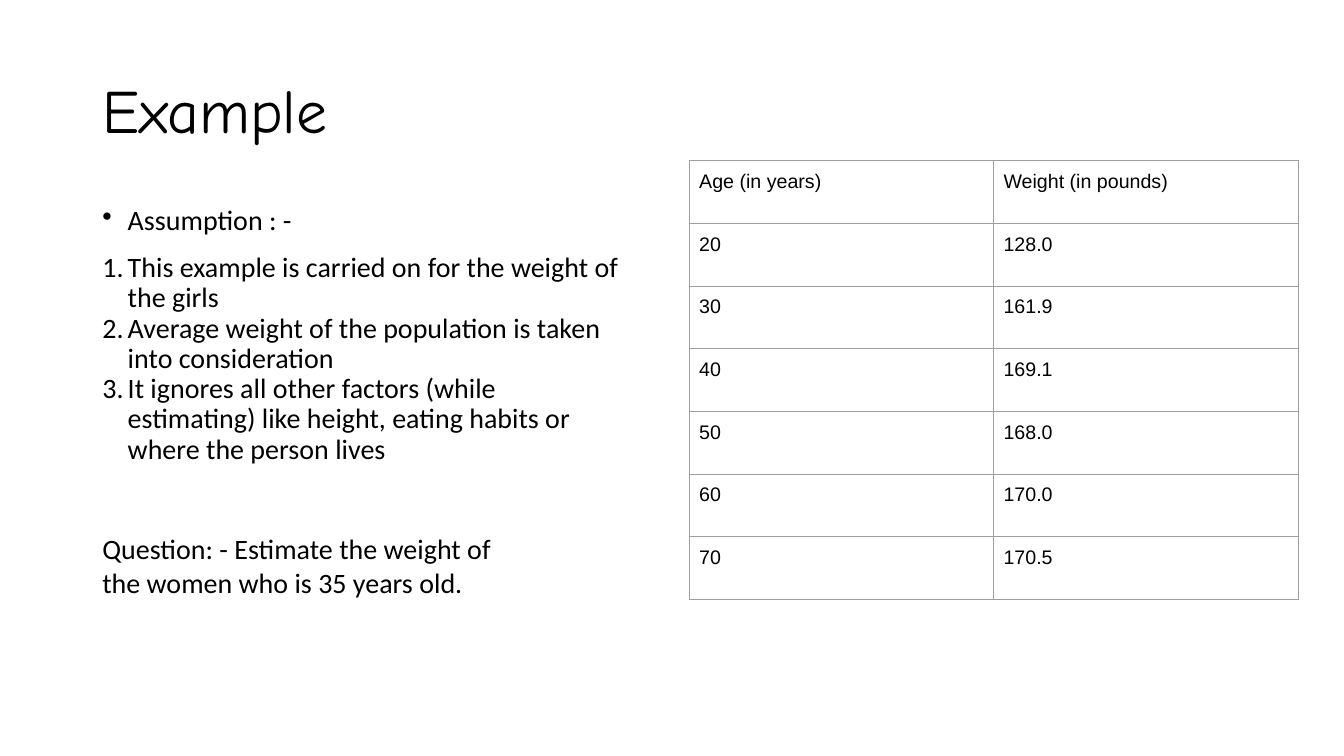
from lxml import etree
from pptx import Presentation
from pptx.dml.color import RGBColor
from pptx.enum.text import MSO_ANCHOR, PP_ALIGN
from pptx.oxml.ns import qn
from pptx.util import Cm, Pt

LEFT = PP_ALIGN.LEFT
MIDDLE = MSO_ANCHOR.MIDDLE
TOP = MSO_ANCHOR.TOP


def style(paragraph, typeface, size, color="000000"):
    paragraph.alignment = LEFT
    paragraph.font.name = typeface
    paragraph.font.size = Pt(size)
    paragraph.font.bold = False
    paragraph.font.color.rgb = RGBColor.from_string(color)


def add_border(cell, side, color):
    line = etree.SubElement(cell._tc.get_or_add_tcPr(), qn(f"a:ln{side}"), w=str(Pt(0.75)))
    fill = etree.SubElement(line, qn("a:solidFill"))
    etree.SubElement(fill, qn("a:srgbClr"), val=color)


prs = Presentation()
prs.slide_width = Cm(33.87)
prs.slide_height = Cm(19.05)
slide = prs.slides.add_slide(prs.slide_layouts[5])

title = slide.shapes.title
title.left, title.top, title.width, title.height = Cm(2.33), Cm(1.01), Cm(29.21), Cm(3.68)
title.text_frame.text = "Example"
title.text_frame.vertical_anchor = MIDDLE
heading = title.text_frame.paragraphs[0]
heading.line_spacing = 0.9
style(heading, "Comic Neue", 44)

assumptions = [
    ("Assumption : -", "buChar", {"char": "•"}, 12),
    ("This example is carried on for the weight of the girls", "buAutoNum", {"type": "arabicPeriod"}, 0),
    ("Average weight of the population is taken into consideration", "buAutoNum", {"type": "arabicPeriod"}, 0),
    ("It ignores all other factors (while estimating) like height, eating habits or where the person lives",
     "buAutoNum", {"type": "arabicPeriod"}, 12),
]
body = slide.shapes.add_textbox(Cm(2.33), Cm(5.08), Cm(13.55), Cm(7.84)).text_frame
body.word_wrap = True
body.text = "\n".join(text for text, *_ in assumptions)
for paragraph, (_, marker, attributes, space_after) in zip(body.paragraphs, assumptions):
    style(paragraph, "Calibri", 20)
    paragraph.line_spacing = 0.9
    paragraph.space_after = Pt(space_after)
    properties = paragraph._p.get_or_add_pPr()
    properties.set("marL", str(Cm(0.64)))
    properties.set("indent", str(Cm(-0.64)))
    bullet = etree.Element(qn(f"a:{marker}"), attributes)
    properties.find(qn("a:defRPr")).addprevious(bullet)

question = slide.shapes.add_textbox(Cm(2.33), Cm(13.28), Cm(10.77), Cm(3.5)).text_frame
question.word_wrap = True
question.text = "Question: - Estimate the weight of the women who is 35 years old."
style(question.paragraphs[0], "Calibri", 20)

weights = [
    ("Age (in years)", "Weight (in pounds)"),
    ("20", "128.0"),
    ("30", "161.9"),
    ("40", "169.1"),
    ("50", "168.0"),
    ("60", "170.0"),
    ("70", "170.5"),
]
table = slide.shapes.add_table(len(weights), 2, Cm(17.37), Cm(4.05), Cm(15.34), Cm(11.06)).table
table.first_row = False
table.horz_banding = False
for row, values in enumerate(weights):
    for column, value in enumerate(values):
        cell = table.cell(row, column)
        cell.text = value
        cell.vertical_anchor = TOP
        cell.margin_left = cell.margin_right = cell.margin_top = cell.margin_bottom = Cm(0.25)
        style(cell.text_frame.paragraphs[0], "Arial", 14)
        for side in "LRTB":
            add_border(cell, side, "9E9E9E")
        cell.fill.background()

prs.save("out.pptx")
